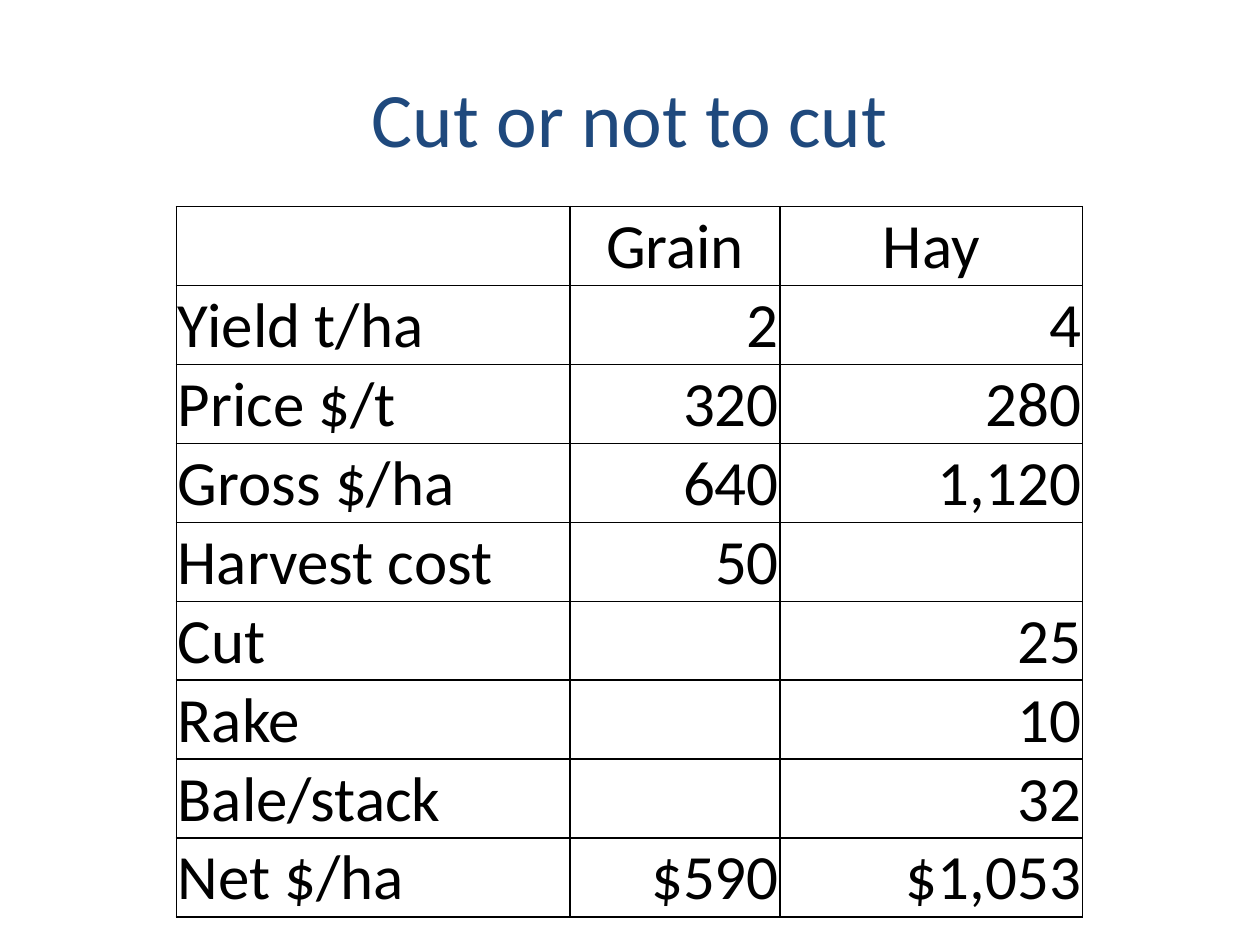
import pptx
import pptx.dml.color
import pptx.enum.text
import pptx.oxml
import pptx.oxml.ns
import pptx.util

Pt = pptx.util.Pt
RGBColor = pptx.dml.color.RGBColor
ALIGN = pptx.enum.text.PP_ALIGN
ANCHOR = pptx.enum.text.MSO_ANCHOR

NAVY = RGBColor(0x1F, 0x49, 0x7D)
BLACK = RGBColor(0, 0, 0)
FONT = "Calibri"

TITLE = "Cut or not to cut"
BUDGET = [
    ("", "Grain", "Hay"),
    ("Yield t/ha", "2", "4"),
    ("Price $/t", "320", "280"),
    ("Gross $/ha", "640", "1,120"),
    ("Harvest cost", "50", ""),
    ("Cut", "", "25"),
    ("Rake", "", "10"),
    ("Bale/stack", "", "32"),
    ("Net $/ha", "$590", "$1,053"),
]
COLUMN_WIDTHS = (225, 120, 172.8)
ROW_HEIGHT = 45.1
TABLE_LEFT, TABLE_TOP = 100.8, 118.1


def write(paragraph, text, size, color, alignment):
    paragraph.alignment = alignment
    run = paragraph.add_run()
    run.text = text
    run.font.name = FONT
    run.font.size = Pt(size)
    run.font.color.rgb = color


def add_borders(cell):
    """Draw a 1 pt line on all four sides; the lines must precede the fill."""
    properties = cell._tc.get_or_add_tcPr()
    for position, side in enumerate(("lnL", "lnR", "lnT", "lnB")):
        line = pptx.oxml.parse_xml(
            f'<a:{side} {pptx.oxml.ns.nsdecls("a")} w="{Pt(1)}"><a:solidFill>'
            f'<a:srgbClr val="{BLACK}"/></a:solidFill></a:{side}>')
        properties.insert(position, line)


def add_title(slide):
    frame = slide.shapes.add_textbox(Pt(36), Pt(21.6), Pt(648), Pt(90)).text_frame
    frame.word_wrap = True
    frame.vertical_anchor = ANCHOR.MIDDLE
    write(frame.paragraphs[0], TITLE, 44, NAVY, ALIGN.CENTER)


def add_budget(slide):
    table = slide.shapes.add_table(
        len(BUDGET), len(COLUMN_WIDTHS), Pt(TABLE_LEFT), Pt(TABLE_TOP),
        Pt(sum(COLUMN_WIDTHS)), Pt(ROW_HEIGHT * len(BUDGET))).table
    table.first_row = table.horz_banding = False
    for column, width in zip(table.columns, COLUMN_WIDTHS):
        column.width = Pt(width)
    for r, entries in enumerate(BUDGET):
        table.rows[r].height = Pt(ROW_HEIGHT)
        for c, entry in enumerate(entries):
            cell = table.cell(r, c)
            cell.fill.background()
            add_borders(cell)
            cell.vertical_anchor = ANCHOR.BOTTOM
            cell.margin_left = cell.margin_right = cell.margin_top = Pt(0.75)
            cell.margin_bottom = 0
            if entry:
                body = ALIGN.RIGHT if c else ALIGN.LEFT
                write(cell.text_frame.paragraphs[0], entry, 36, BLACK,
                      body if r else ALIGN.CENTER)


def main():
    presentation = pptx.Presentation()
    presentation.slide_width, presentation.slide_height = Pt(720), Pt(540)
    slide = presentation.slides.add_slide(presentation.slide_layouts[6])
    add_title(slide)
    add_budget(slide)
    presentation.save("out.pptx")


if __name__ == "__main__":
    main()
